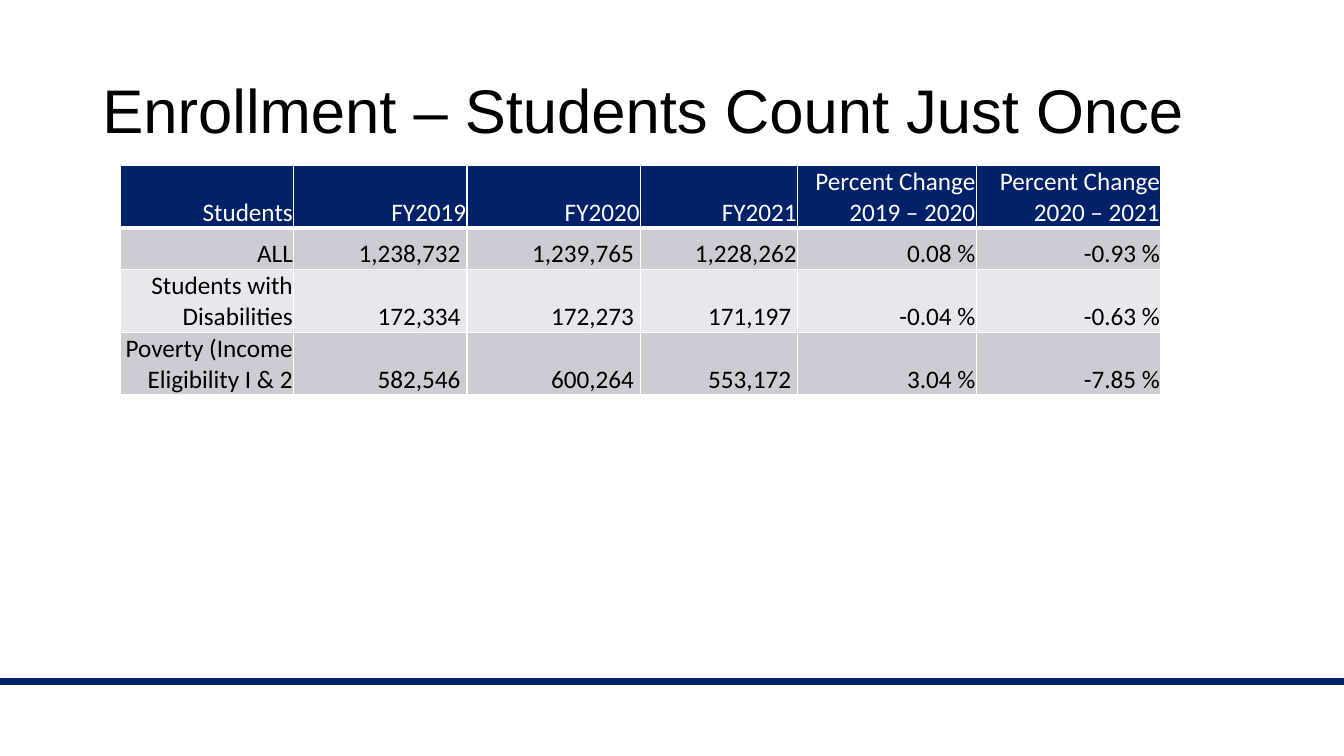
from dataclasses import dataclass

from lxml.etree import SubElement
from pptx import Presentation
from pptx.dml.color import RGBColor
from pptx.enum.shapes import MSO_CONNECTOR as Connector
from pptx.enum.text import MSO_ANCHOR as Anchor, PP_ALIGN as Align
from pptx.oxml.ns import qn
from pptx.util import Cm, Pt


@dataclass(frozen=True)
class Theme:
    """Colours, fonts and type sizes of the slide."""
    navy: str = "012169"
    white: str = "FFFFFF"
    black: str = "000000"
    bands: tuple = ("CCCDD4", "E7E8EB")
    title_font: str = "Arial"
    table_font: str = "Calibri"
    title_size: int = 44
    table_size: int = 18
    rule_width: float = 4.5


THEME = Theme()
ENROLLMENT = [
    ["Students", "FY2019", "FY2020", "FY2021",
     "Percent Change 2019 – 2020", "Percent Change 2020 – 2021"],
    ["ALL", "1,238,732 ", "1,239,765 ", "1,228,262", "0.08 %", "-0.93 %"],
    ["Students with Disabilities", "172,334 ", "172,273 ", "171,197 ", "-0.04 %", "-0.63 %"],
    ["Poverty (Income Eligibility I & 2", "582,546 ", "600,264 ", "553,172 ",
     "3.04 %", "-7.85 %"],
]
COLUMN_WIDTHS = [4.37, 4.37, 4.37, 3.96, 4.5, 4.65]
ROW_HEIGHTS = [1.58, 1.04, 1.58, 1.58]


def style_font(paragraph, name, size, color):
    """Set the typeface, size and colour of a paragraph."""
    font = paragraph.font
    font.name, font.size, font.bold = name, Pt(size), False
    font.color.rgb = RGBColor.from_string(color)


def add_footer_rule(slide, left, top, width):
    """Draw the navy rule across the foot of the slide."""
    rule = slide.shapes.add_connector(
        Connector.STRAIGHT, Cm(left), Cm(top), Cm(left + width), Cm(top))
    rule.line.color.rgb = RGBColor.from_string(THEME.navy)
    rule.line.width = Pt(THEME.rule_width)
    SubElement(rule._element.spPr, qn("a:effectLst"))


def add_title(slide, left, top, width, height, wording):
    """Place the slide title, centred vertically in its box."""
    frame = slide.shapes.add_textbox(Cm(left), Cm(top), Cm(width), Cm(height)).text_frame
    frame.word_wrap = True
    frame.vertical_anchor = Anchor.MIDDLE
    heading = frame.paragraphs[0]
    heading.text = wording
    heading.line_spacing = 0.9
    style_font(heading, THEME.title_font, THEME.title_size, THEME.black)


def add_borders(cell, top, bottom):
    """Give a cell white borders, with the top and bottom widths in points."""
    properties = cell._tc.get_or_add_tcPr()
    for side, width in (("L", 1), ("R", 1), ("T", top), ("B", bottom)):
        border = SubElement(properties, qn(f"a:ln{side}"), w=str(Pt(width)))
        fill = SubElement(border, qn("a:solidFill"))
        SubElement(fill, qn("a:srgbClr"), val=THEME.white)


def fill_cell(cell, wording, row):
    """Write and style one table cell according to its row."""
    is_header = row == 0
    add_borders(cell, top=3 if row == 1 else 1, bottom=3 if is_header else 1)
    cell.fill.solid()
    cell.fill.fore_color.rgb = RGBColor.from_string(
        THEME.navy if is_header else THEME.bands[(row - 1) % 2])
    cell.margin_left = cell.margin_right = cell.margin_top = Cm(0.02)
    cell.margin_bottom = 0
    cell.vertical_anchor = Anchor.BOTTOM
    cell.text = wording
    entry = cell.text_frame.paragraphs[0]
    entry.alignment = Align.RIGHT
    style_font(entry, THEME.table_font, THEME.table_size,
               THEME.white if is_header else THEME.black)


def add_enrollment_table(slide, left, top):
    """Build the enrollment table from its top left corner."""
    table = slide.shapes.add_table(
        len(ROW_HEIGHTS), len(COLUMN_WIDTHS), Cm(left), Cm(top),
        Cm(sum(COLUMN_WIDTHS)), Cm(sum(ROW_HEIGHTS))).table
    for column, width in zip(table.columns, COLUMN_WIDTHS):
        column.width = Cm(width)
    for row, (height, entries) in enumerate(zip(ROW_HEIGHTS, ENROLLMENT)):
        table.rows[row].height = Cm(height)
        for column, wording in enumerate(entries):
            fill_cell(table.cell(row, column), wording, row)


def main():
    """Assemble and save the enrollment slide."""
    deck = Presentation()
    deck.slide_width, deck.slide_height = Cm(33.87), Cm(19.05)
    slide = deck.slides.add_slide(deck.slide_layouts[6])
    add_footer_rule(slide, -0.08, 17.17, 34.03)
    add_title(slide, 2.33, 1.01, 29.21, 3.68, "Enrollment – Students Count Just Once")
    add_enrollment_table(slide, 3.03, 4.17)
    deck.save("out.pptx")


if __name__ == "__main__":
    main()
